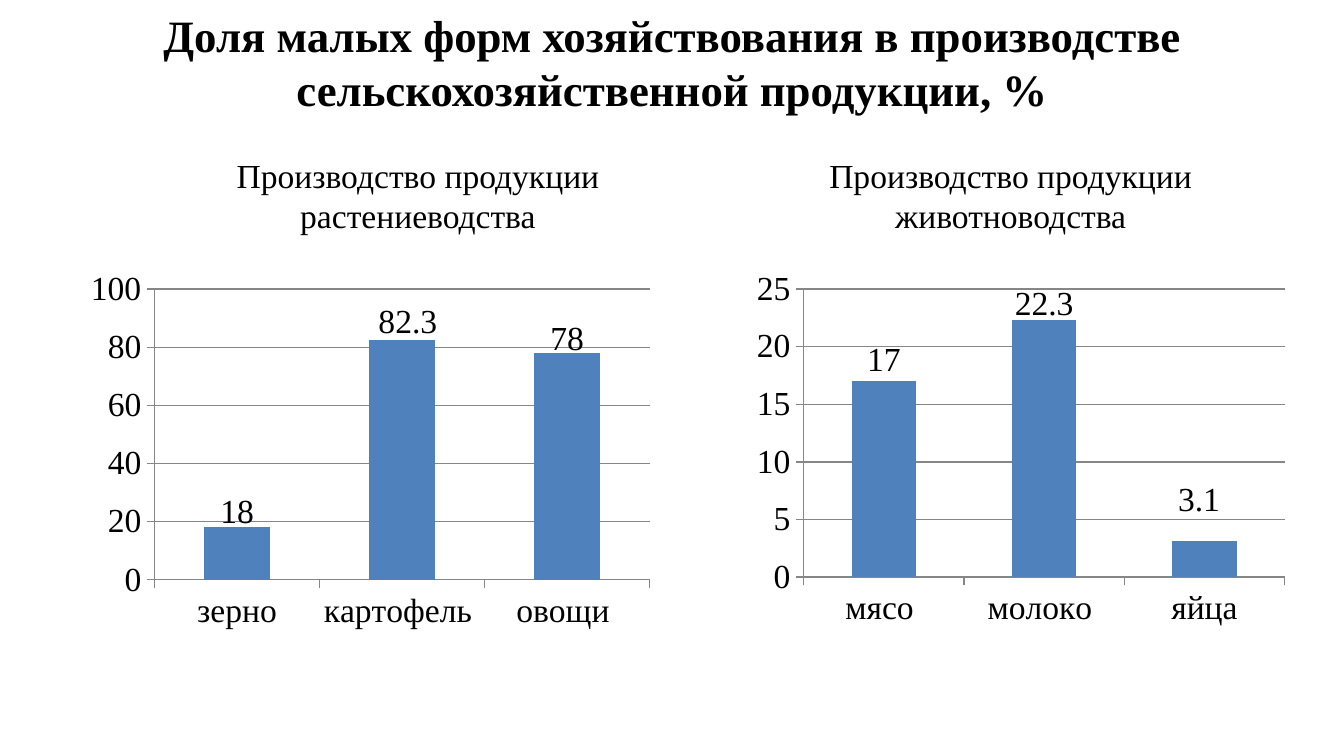
"""Build a slide with two column charts on the farm output share of small holdings."""
from dataclasses import dataclass

from lxml import etree
from pptx import Presentation
from pptx.chart.data import CategoryChartData
from pptx.dml.color import RGBColor
from pptx.enum.chart import XL_CHART_TYPE, XL_TICK_MARK
from pptx.enum.text import PP_ALIGN
from pptx.oxml.ns import qn
from pptx.slide import Slide
from pptx.util import Inches, Pt

STACKED = XL_CHART_TYPE.COLUMN_STACKED
TICK_OUTSIDE = XL_TICK_MARK.OUTSIDE
CENTER = PP_ALIGN.CENTER

BLACK = RGBColor(0x00, 0x00, 0x00)
WHITE = RGBColor(0xFF, 0xFF, 0xFF)
BLUE = RGBColor(0x4F, 0x81, 0xBD)
GRAY = RGBColor(0x86, 0x86, 0x86)
SERIF = "Times New Roman"
BODY_SIZE = 18


@dataclass
class Column:
    category: str
    value: float
    label_dx: float
    label_dy: float


@dataclass
class Panel:
    heading: str
    heading_left: float
    chart_left: float
    chart_width: float
    chart_height: float
    columns: list[Column]


PANELS = [
    Panel("Производство продукции растениеводства", 1.22, 0.59, 4.33, 2.78, [
        Column("зерно", 18, 0, -0.11),
        Column("картофель ", 82.3, 0.01, -0.37),
        Column("овощи ", 78, 0, -0.34),
    ]),
    Panel("Производство продукции животноводства", 5.63, 5.55, 4.09, 2.76, [
        Column("мясо ", 17, 0, -0.32),
        Column("молоко ", 22.3, 0, -0.39),
        Column("яйца", 3.1, -0.01, -0.16),
    ]),
]


def style_font(font, size: float, bold: bool = False) -> None:
    font.name = SERIF
    font.size = Pt(size)
    font.bold = bold
    font.color.rgb = BLACK


def add_text(page: Slide, text: str, left: float, top: float, width: float,
             height: float, size: float, bold: bool = False) -> None:
    box = page.shapes.add_textbox(Inches(left), Inches(top), Inches(width), Inches(height))
    box.fill.solid()
    box.fill.fore_color.rgb = WHITE
    box.text_frame.word_wrap = True
    box.text_frame.text = text
    para = box.text_frame.paragraphs[0]
    para.alignment = CENTER
    style_font(para.runs[0].font, size, bold)


def shift_label(label, dx: float, dy: float) -> None:
    layout = etree.Element(qn("c:layout"))
    manual = etree.SubElement(layout, qn("c:manualLayout"))
    for axis, offset in (("x", dx), ("y", dy)):
        etree.SubElement(manual, qn(f"c:{axis}")).set("val", str(offset))
    label.insert(1, layout)


def add_column_chart(page: Slide, panel: Panel) -> None:
    chart_data = CategoryChartData()
    chart_data.categories = [column.category for column in panel.columns]
    chart_data.add_series("Series 1", [column.value for column in panel.columns])
    chart = page.shapes.add_chart(
        STACKED, Inches(panel.chart_left), Inches(1.96),
        Inches(panel.chart_width), Inches(panel.chart_height), chart_data).chart
    chart.has_legend = False
    chart.has_title = False
    style_font(chart.font, BODY_SIZE)

    for axis in (chart.category_axis, chart.value_axis):
        axis.major_tick_mark = TICK_OUTSIDE
        axis.format.line.color.rgb = GRAY
        style_font(axis.tick_labels.font, BODY_SIZE)
    chart.value_axis.has_major_gridlines = True
    chart.value_axis.major_gridlines.format.line.color.rgb = GRAY

    plot = chart.plots[0]
    plot.gap_width = 150
    plot.overlap = 100
    plot.vary_by_categories = False
    series = plot.series[0]
    series.format.fill.solid()
    series.format.fill.fore_color.rgb = BLUE
    series.data_labels.show_value = True
    style_font(series.data_labels.font, BODY_SIZE)
    for index in range(len(panel.columns)):
        style_font(series.points[index].data_label.font, BODY_SIZE)
    for label, column in zip(series._element.iter(qn("c:dLbl")), panel.columns):
        shift_label(label, column.label_dx, column.label_dy)
    for leader_lines in series._element.iter(qn("c:showLeaderLines")):
        leader_lines.set("val", "0")


def main() -> None:
    deck = Presentation()
    deck.slide_width = Inches(10)
    deck.slide_height = Inches(10 * 9 / 16)
    page = deck.slides.add_slide(deck.slide_layouts[6])
    add_text(page, "Доля малых форм хозяйствования в производстве сельскохозяйственной продукции, %",
             0, 0.01, 10, 0.91, 24, bold=True)
    for panel in PANELS:
        add_column_chart(page, panel)
    for panel in PANELS:
        add_text(page, panel.heading, panel.heading_left, 1.1, 3.78, 0.71, BODY_SIZE)
    deck.save("out.pptx")


if __name__ == "__main__":
    main()
